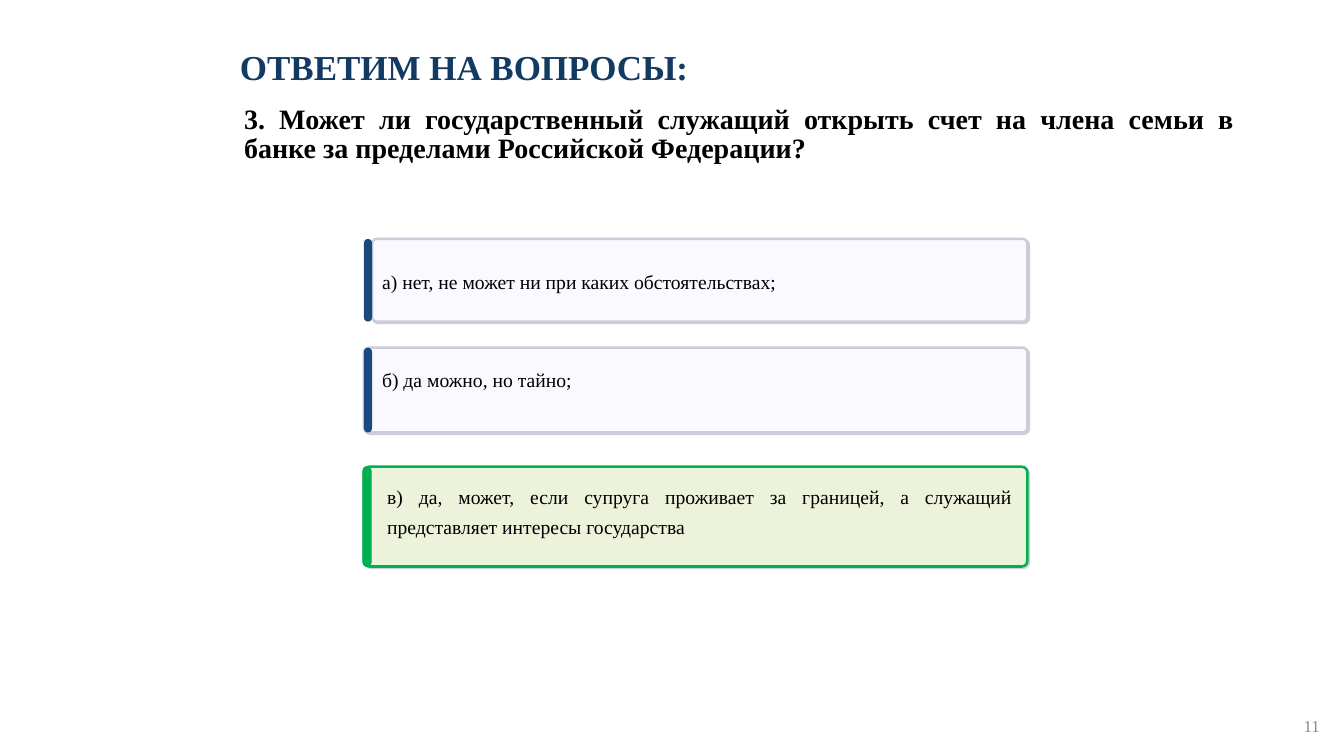
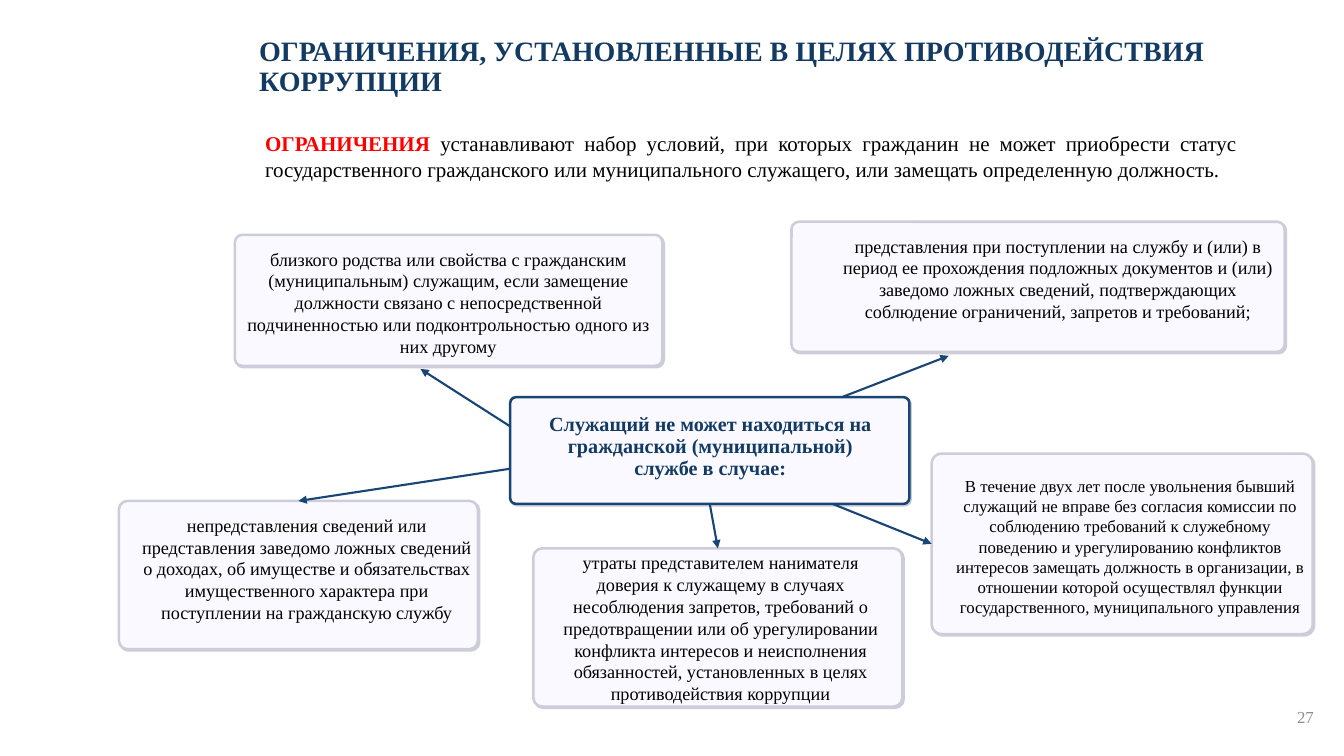
from lxml import etree
from pptx import Presentation
from pptx import util as u
from pptx.dml.color import RGBColor
from pptx.enum import shapes as sh, text as tx
from pptx.oxml import ns

PX = 9144  # 100 px to the inch
FONT = "Times New Roman"
HUES = {
    "head": "133A63", "text": "000000", "alert": "FF0000", "page": "8C8C8C",
    "card": "F9F9FF", "edge": "CDCDD9", "navy": "1A497D", "link": "194576",
    "good": "00B050", "pale": "EDF3DB",
}
LEFT, MID = tx.PP_ALIGN.LEFT, tx.PP_ALIGN.CENTER
RIGHT, FULL = tx.PP_ALIGN.RIGHT, tx.PP_ALIGN.JUSTIFY
TOP, LEFTSIDE, FOOT = 0, 1, 2
LEAD = u.Pt(20.8)


def px(*nums):
    return [u.Emu(n * PX) for n in nums]


def hue(name):
    return RGBColor.from_string(HUES[name])


def add_tag(parent, tag, **attrs):
    return etree.SubElement(parent, ns.qn(tag), attrs)


def fill_text(frame, runs, size, align=LEFT, lead=None, pad=(0, 0), mid=False):
    """Set one paragraph; runs are (wording, colour, bold)."""
    frame.word_wrap = True
    frame.auto_size = tx.MSO_AUTO_SIZE.NONE
    frame.margin_left = frame.margin_right = px(pad[0])[0]
    frame.margin_top = frame.margin_bottom = px(pad[1])[0]
    frame.vertical_anchor = tx.MSO_ANCHOR.MIDDLE if mid else tx.MSO_ANCHOR.TOP
    para = frame.paragraphs[0]
    para.alignment = align
    if lead:
        para.line_spacing = lead
    for words, tint, bold in runs:
        run = para.add_run()
        run.text = words
        run.font.name = FONT
        run.font.size = u.Pt(size)
        run.font.bold = bold
        run.font.color.rgb = hue(tint)


def add_text(slide, area, runs, size, **style):
    if isinstance(runs, str):
        runs = [(runs, "text", False)]
    box = slide.shapes.add_textbox(*px(*area))
    fill_text(box.text_frame, runs, size, **style)


def set_title(slide, area, words, size):
    title = slide.shapes.title
    title.left, title.top, title.width, title.height = px(*area)
    fill_text(title.text_frame, [(words, "head", True)], size,
              lead=0.9, pad=(10, 5), mid=True)


def add_page(slide, left, top, num):
    add_text(slide, (left, top, 300, 40), [(num, "page", False)], 12,
             align=RIGHT, pad=(10, 5), mid=True)


def add_round(shapes, area, fill, line, width, curve):
    box = shapes.add_shape(sh.MSO_SHAPE.ROUNDED_RECTANGLE, *px(*area))
    box.adjustments[0] = curve
    box.shadow.inherit = False
    box.fill.solid()
    box.fill.fore_color.rgb = hue(fill)
    if line:
        box.line.color.rgb = hue(line)
        box.line.width = u.Pt(width)
    else:
        box.line.fill.background()
    return box


def add_card(shapes, area, fill="card", line="edge"):
    """Rounded panel with a hard shadow to the lower right."""
    card = add_round(shapes, area, fill, line, 1.8, 0.056)
    glow = add_tag(card._element.spPr.find(ns.qn("a:effectLst")),
                   "a:outerShdw", blurRad="0", dist=str(u.Pt(1.4)),
                   dir="2700000", algn="tl", rotWithShape="0")
    add_tag(glow, "a:srgbClr", val=HUES["edge"])
    return card


def add_arrow(slide, start, end, tail=None, head=None):
    """Arrow from start to end; tail and head are (shape, site) to join."""
    link = slide.shapes.add_connector(sh.MSO_CONNECTOR.STRAIGHT,
                                      *px(*start, *end))
    if tail:
        link.begin_connect(*tail)
    if head:
        link.end_connect(*head)
    link.line.color.rgb = hue("link")
    link.line.width = u.Pt(1.5)
    add_tag(link.line._get_or_add_ln(), "a:tailEnd", type="triangle")
    add_tag(link._element.spPr, "a:effectLst")


def add_answer(slide, card, bar, area, words, right=False):
    group = slide.shapes.add_group_shape().shapes
    if right:
        add_card(group, card, "pale", "good")
        add_round(group, bar, "good", "good", 0.75, 0.5)
    else:
        add_card(group, card)
        add_round(group, bar, "navy", None, 0, 0.5)
    add_text(slide, area, words, 14, align=FULL, lead=LEAD)


def build_quiz(slide):
    set_title(slide, (228, 19, 1028, 99), "ОТВЕТИМ НА ВОПРОСЫ:", 25)
    add_text(slide, (242, 105, 982, 143),
             [("3. Может ли государственный служащий открыть счет на члена "
               "семьи в банке за пределами Российской Федерации?",
               "text", True)], 20, align=FULL, lead=LEAD)
    add_answer(slide, (369, 237, 650, 82), (361, 237, 8, 82),
               (379, 262, 722, 43),
               "а) нет, не может ни при каких обстоятельствах;")
    add_answer(slide, (361, 345, 658, 84), (361, 345, 8, 84),
               (379, 359, 620, 127), "б) да можно, но тайно;")
    add_answer(slide, (361, 463, 658, 99), (360, 463, 8, 99),
               (384, 476, 620, 61),
               "в) да, может, если супруга проживает за границей, а служащий "
               "представляет интересы государства", right=True)
    add_page(slide, 1019, 700, "11")


def build_limits(slide):
    set_title(slide, (247, 32, 994, 70),
              "ОГРАНИЧЕНИЯ, УСТАНОВЛЕННЫЕ В ЦЕЛЯХ ПРОТИВОДЕЙСТВИЯ КОРРУПЦИИ",
              20)
    add_text(slide, (263, 130, 964, 90), [
        ("ОГРАНИЧЕНИЯ ", "alert", True),
        ("устанавливают набор условий, при которых гражданин не может "
         "приобрести статус государственного гражданского или муниципального "
         "служащего, или замещать определенную должность.", "text", False),
    ], 15, align=FULL)

    cases = {
        "kin": ((233, 233, 424, 130), (241, 246, 407, 143), 13,
                "близкого родства или свойства с гражданским (муниципальным) "
                "служащим, если замещение должности связано с "
                "непосредственной подчиненностью или подконтрольностью "
                "одного из них другому"),
        "fake": ((785, 220, 489, 129), (824, 233, 450, 194), 13,
                 "представления при поступлении на службу и (или) в период ее "
                 "прохождения подложных документов и (или) заведомо ложных "
                 "сведений, подтверждающих соблюдение ограничений, запретов "
                 "и требований;"),
        "data": ((118, 497, 356, 147), (138, 510, 332, 90), 13,
                 "непредставления сведений или представления заведомо ложных "
                 "сведений о доходах, об имуществе и обязательствах "
                 "имущественного характера при поступлении на гражданскую "
                 "службу"),
        "trust": ((529, 544, 366, 157), (547, 547, 335, 136), 13,
                  "утраты представителем нанимателя доверия к служащему в "
                  "случаях несоблюдения запретов, требований о предотвращении "
                  "или об урегулировании конфликта интересов и неисполнения "
                  "обязанностей, установленных в целях противодействия "
                  "коррупции"),
        "leave": ((924, 450, 378, 179), (946, 472, 350, 136), 12,
                  "В течение двух лет после увольнения бывший служащий не "
                  "вправе без согласия комиссии по соблюдению требований к "
                  "служебному поведению и урегулированию конфликтов интересов "
                  "замещать должность в организации, в отношении которой "
                  "осуществлял функции государственного, муниципального "
                  "управления"),
    }
    cards = {}
    for name, (area, inner, size, words) in cases.items():
        cards[name] = add_card(slide.shapes, area)
        add_text(slide, inner, words, size, align=MID)

    core = add_card(slide.shapes, (506, 394, 396, 106), line="link")
    add_text(slide, (526, 394, 357, 99),
             [("Служащий не может находиться на гражданской (муниципальной) "
               "службе в случае:", "head", True)], 14.4,
             align=MID, lead=0.9, pad=(10, 5), mid=True)

    add_arrow(slide, (506, 423), (417, 366))
    add_arrow(slide, (506, 465), (297, 497), head=(cards["data"], TOP))
    add_arrow(slide, (835, 394), (941, 353))
    add_arrow(slide, (704, 500), (715, 547), tail=(core, FOOT),
              head=(cards["trust"], TOP))
    add_arrow(slide, (826, 500), (924, 540), head=(cards["leave"], LEFTSIDE))
    add_page(slide, 1013, 691, "27")


def main():
    deck = Presentation()
    deck.slide_width, deck.slide_height = px(1333, 750)
    for build in (build_quiz, build_limits):
        build(deck.slides.add_slide(deck.slide_layouts[5]))
    deck.save("out.pptx")


if __name__ == "__main__":
    main()
